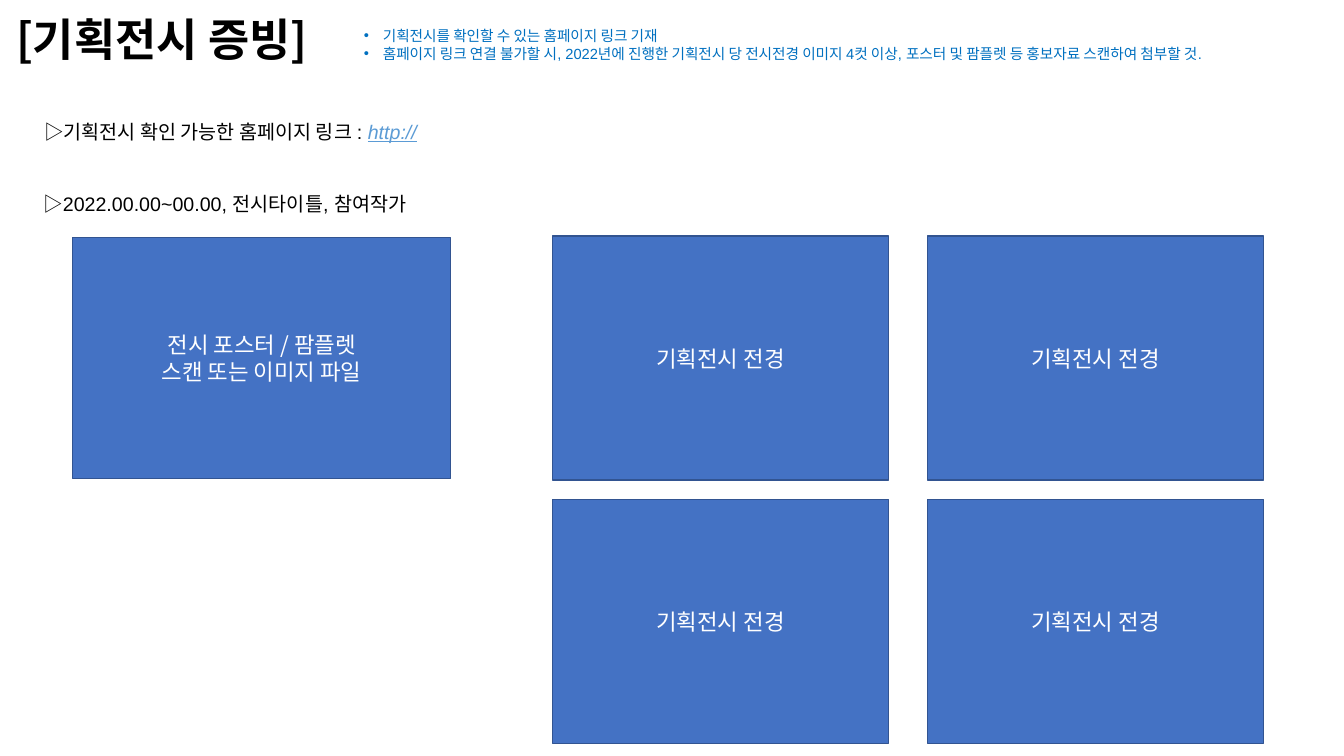
from lxml import etree
from pptx import Presentation
from pptx import util as u
from pptx.dml.color import RGBColor
from pptx.enum import shapes, text
from pptx.oxml.ns import qn

KOREAN = "Noto Sans CJK KR"
BLUE = "0070C0"


def write(paragraph, content, size=14, font="Arial", color="000000", **styles):
    run = paragraph.add_run()
    run.text = content
    run.font.size = u.Pt(size)
    run.font.name = font
    run.font.color.rgb = RGBColor.from_string(color)
    for name, value in styles.items():
        setattr(run.font, name, value)
    latin = run.font._element.find(qn("a:latin"))
    east_asian = etree.Element(qn("a:ea"), typeface=KOREAN)
    latin.addnext(east_asian)


def add_text_frame(slide, left, top, width, height):
    box = slide.shapes.add_textbox(u.Cm(left), u.Cm(top), u.Cm(width), u.Cm(height))
    box.text_frame.word_wrap = True
    return box.text_frame


presentation = Presentation()
presentation.slide_width = u.Cm(33.87)
presentation.slide_height = u.Cm(19.05)
slide = presentation.slides.add_slide(presentation.slide_layouts[5])

title = slide.shapes.title
title.left, title.top, title.width, title.height = u.Cm(0.15), u.Cm(0.15), u.Cm(29.21), u.Cm(1.83)
title.text_frame.vertical_anchor = text.MSO_ANCHOR.MIDDLE
title_paragraph = title.text_frame.paragraphs[0]
title_paragraph.alignment = text.PP_ALIGN.LEFT
title_paragraph.line_spacing = 0.9
write(title_paragraph, "[기획전시 증빙]", size=32, font=KOREAN, bold=True)

guide_lines = [
    "기획전시를 확인할 수 있는 홈페이지 링크 기재",
    "홈페이지 링크 연결 불가할 시, 2022년에 진행한 기획전시 당 전시전경 이미지 4컷 이상, 포스터 및 팜플렛 등 홍보자료 스캔하여 첨부할 것.",
]
guide = add_text_frame(slide, 8.92, 0.56, 24.71, 1.14)
for index, line in enumerate(guide_lines):
    paragraph = guide.add_paragraph() if index else guide.paragraphs[0]
    write(paragraph, line, size=10.5, color=BLUE)
    properties = paragraph._p.get_or_add_pPr()
    properties.set("marL", str(u.Cm(0.48)))
    properties.set("indent", str(u.Cm(-0.48)))
    etree.SubElement(properties, qn("a:buFont"), typeface="Arial")
    etree.SubElement(properties, qn("a:buChar"), char="•")

link_paragraph = add_text_frame(slide, 0.86, 2.9, 18.52, 0.86).paragraphs[0]
write(link_paragraph, "▷", font=KOREAN)
write(link_paragraph, "기획전시 확인 가능한 홈페이지 링크 : ")
write(link_paragraph, "http://", color="5B9BD5", italic=True, underline=True)

exhibition_paragraph = add_text_frame(slide, 0.84, 4.72, 18.52, 0.86).paragraphs[0]
write(exhibition_paragraph, "▷", font=KOREAN)
write(exhibition_paragraph, "2022.00.00~00.00, 전시타이틀, 참여작가")

frames = [(1.83, 5.99, 9.53, 6.07, ["전시 포스터 / 팜플렛", "스캔 또는 이미지 파일"])]
for row in range(2):
    for column in range(2):
        frames.append((13.93 + 9.45 * column, 5.95 + 6.63 * row, 8.46, 6.15, ["기획전시 전경"]))

for left, top, width, height, labels in frames:
    frame = slide.shapes.add_shape(
        shapes.MSO_SHAPE.RECTANGLE, u.Cm(left), u.Cm(top), u.Cm(width), u.Cm(height)
    )
    frame.shadow.inherit = False
    frame.fill.solid()
    frame.fill.fore_color.rgb = RGBColor.from_string("4472C4")
    frame.line.color.rgb = RGBColor.from_string("325491")
    frame.line.width = u.Pt(1)
    frame.text_frame.vertical_anchor = text.MSO_ANCHOR.MIDDLE
    for index, label in enumerate(labels):
        paragraph = frame.text_frame.add_paragraph() if index else frame.text_frame.paragraphs[0]
        paragraph.alignment = text.PP_ALIGN.CENTER
        write(paragraph, label, size=16, font=KOREAN, color="FFFFFF")

presentation.save("out.pptx")
